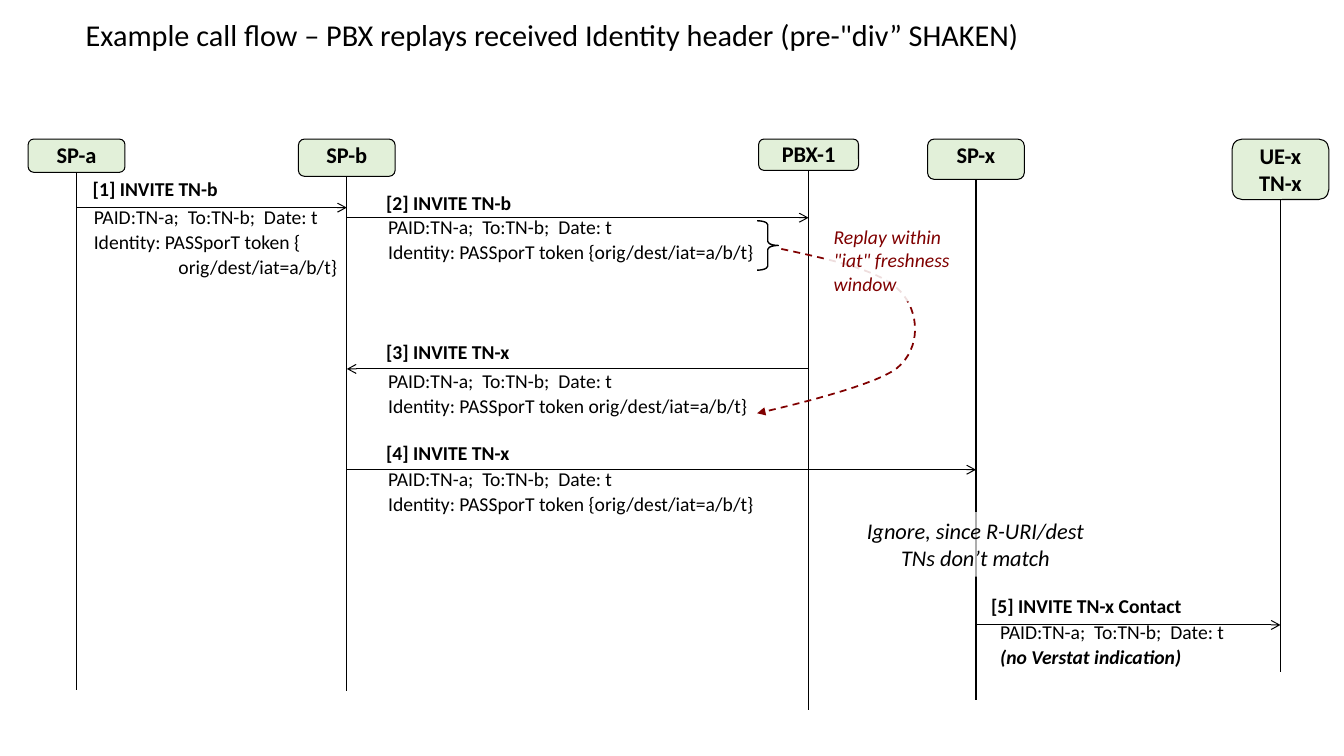
from lxml import etree
from pptx import Presentation, util as u
from pptx.dml.color import RGBColor
from pptx.enum import dml, shapes, text
from pptx.oxml import ns

BLACK = RGBColor(0, 0, 0)
WHITE = RGBColor(255, 255, 255)
GREEN = RGBColor(0xE2, 0xF0, 0xD9)
MAROON = RGBColor(0x80, 0, 0)
FONT = "Calibri"

HEAD_TOP = 1.38
# name lines, lifeline x, head width, head height, lifeline end
PARTICIPANTS = [
    (["SP-a"], 0.76, 0.96, 0.33, 6.85),
    (["SP-b"], 3.44, 0.96, 0.37, 6.86),
    (["PBX-1"], 8.02, 0.99, 0.31, 7.04),
    (["SP-x"], 9.68, 0.96, 0.4, 6.94),
    (["UE-x", "TN-x"], 12.7, 0.96, 0.6, 6.67),
]
SP_A, SP_B, PBX, SP_X, UE_X = [participant[1] for participant in PARTICIPANTS]

HEADERS = "PAID:TN-a;  To:TN-b;  Date: t"
TOKEN = "Identity: PASSporT token {orig/dest/iat=a/b/t}"
# label, start x, end x, arrow y, label (left, top), details (left, top, width), lines
MESSAGES = [
    ("[1] INVITE TN-b", SP_A, SP_B, 2.06, (0.79, 1.71), (0.8, 2.05, 2.89),
     [HEADERS, "Identity: PASSporT token {", "orig/dest/iat=a/b/t}"]),
    ("[2] INVITE TN-b", SP_B, PBX, 2.16, (3.7, 1.85), (3.72, 2.15, 4.09),
     [HEADERS, TOKEN]),
    ("[3] INVITE TN-x", PBX, SP_B, 3.66, (3.7, 3.33), (3.72, 3.68, 3.85),
     [HEADERS, "Identity: PASSporT token orig/dest/iat=a/b/t}"]),
    ("[4] INVITE TN-x", SP_B, SP_X, 4.66, (3.7, 4.33), (3.72, 4.65, 4.15),
     [HEADERS, TOKEN]),
    ("[5] INVITE TN-x Contact", SP_X, UE_X, 6.2, (9.7, 5.85), (9.79, 6.17, 3.03),
     [HEADERS, "(no Verstat indication)"]),
]
REPLAY_START = (7.75, 2.47)
REPLAY_CURVES = [
    ((8.31, 2.59), (8.74, 2.69), (8.93, 2.89)),
    ((9.12, 3.09), (9.14, 3.45), (8.9, 3.65)),
    ((8.66, 3.85), (7.51, 4.1), (7.51, 4.1)),
]


def inches(*lengths):
    return [u.Inches(length) for length in lengths]


def set_font(para, size, color=BLACK, bold=False, italic=False):
    font = para.font
    font.name, font.size = FONT, u.Pt(size)
    font.bold, font.italic = bold, italic
    font.color.rgb = color


def set_margins(frame, across, down):
    frame.margin_left = frame.margin_right = u.Inches(across)
    frame.margin_top = frame.margin_bottom = u.Inches(down)


def write_lines(frame, lines):
    frame.text = "\n".join(lines)
    return frame.paragraphs


def style_line(shape, color=BLACK, width=0.75, arrow=None):
    shape.line.color.rgb = color
    shape.line.width = u.Pt(width)
    if arrow:
        line = shape.line._get_or_add_ln()
        etree.SubElement(line, ns.qn("a:tailEnd"), type=arrow)


def add_line(page, x1, y1, x2, y2, arrow=None):
    line = page.shapes.add_connector(
        shapes.MSO_CONNECTOR.STRAIGHT, *inches(x1, y1, x2, y2))
    style_line(line, arrow=arrow)
    etree.SubElement(line._element.spPr, ns.qn("a:effectLst"))


def add_plain_shape(page, kind, box):
    shape = page.shapes.add_shape(kind, *inches(*box))
    shape.shadow.inherit = False
    shape.text_frame.word_wrap = True
    shape.text_frame.vertical_anchor = text.MSO_ANCHOR.TOP
    return shape


def add_title(page, wording, box):
    title = page.shapes.title
    title.left, title.top, title.width, title.height = inches(*box)
    frame = title.text_frame
    frame.text = wording
    frame.auto_size = text.MSO_AUTO_SIZE.NONE
    frame.vertical_anchor = text.MSO_ANCHOR.MIDDLE
    para = frame.paragraphs[0]
    para.alignment, para.line_spacing = text.PP_ALIGN.LEFT, 0.9
    set_font(para, 21.6)


def add_participant(page, names, x, width, height, end):
    box = (x - width / 2, HEAD_TOP, width, height)
    head = add_plain_shape(page, shapes.MSO_SHAPE.ROUNDED_RECTANGLE, box)
    head.fill.solid()
    head.fill.fore_color.rgb = GREEN
    style_line(head)
    set_margins(head.text_frame, 0, 0)
    for para in write_lines(head.text_frame, names):
        para.alignment = text.PP_ALIGN.CENTER
        set_font(para, 16, bold=True)
    add_line(page, x, HEAD_TOP + height, x, end)


def add_message_text(page, box, lines, margin, space, bold=False):
    frame = page.shapes.add_textbox(*inches(*box)).text_frame
    frame.word_wrap = True
    set_margins(frame, 0.13, margin)
    paras = write_lines(frame, lines)
    for para in paras:
        para.line_spacing, para.space_before = 0.9, u.Pt(space)
        set_font(para, 14, bold=bold)
    return paras


def add_message(page, label, start, end, y, label_at, details_at, lines):
    add_line(page, start, y, end, y, arrow="arrow")
    add_message_text(page, (*label_at, 2.47, 0.35), [label], 0.07, 8, bold=True)
    height = 0.25 * len(lines)
    paras = add_message_text(page, (*details_at, height), lines, 0.01, 2.7)
    for para in paras:
        if para.text.startswith("orig"):
            para._p.get_or_add_pPr().set("marL", str(u.Inches(0.84)))
        elif para.text.startswith("("):
            set_font(para, 14, bold=True, italic=True)


def curve_points(start, curves, steps=16):
    """Return points along a chain of cubic Bezier curves."""
    points = [start]
    for first, second, end in curves:
        origin = points[-1]
        for step in range(1, steps + 1):
            t = step / steps
            weights = ((1 - t) ** 3, 3 * t * (1 - t) ** 2, 3 * t * t * (1 - t), t ** 3)
            corners = (origin, first, second, end)
            points.append(tuple(
                sum(w * corner[axis] for w, corner in zip(weights, corners))
                for axis in (0, 1)))
    return points


def add_replay(page, brace_box):
    brace = add_plain_shape(page, shapes.MSO_SHAPE.RIGHT_BRACE, brace_box)
    brace.adjustments[0] = 0.187
    brace.fill.background()
    style_line(brace, width=1)

    start, *points = [inches(*point)
                      for point in curve_points(REPLAY_START, REPLAY_CURVES)]
    builder = page.shapes.build_freeform(*start)
    builder.add_line_segments(points, close=False)
    path = builder.convert_to_shape()
    path.shadow.inherit = False
    path.fill.background()
    path.line.dash_style = dml.MSO_LINE.DASH
    style_line(path, MAROON, 1.25, "triangle")


def add_note(page, box, wording, size, color, opacity, alignment):
    note = add_plain_shape(page, shapes.MSO_SHAPE.RECTANGLE, box)
    note.fill.solid()
    note.fill.fore_color.rgb = WHITE
    tint = note.fill._xPr.find(".//" + ns.qn("a:srgbClr"))
    etree.SubElement(tint, ns.qn("a:alpha"), val=str(opacity * 1000))
    note.line.fill.background()
    para = write_lines(note.text_frame, [wording])[0]
    para.alignment = alignment
    set_font(para, size, color, italic=True)


def main():
    deck = Presentation()
    deck.slide_width, deck.slide_height = inches(13.33, 7.5)
    page = deck.slides.add_slide(deck.slide_layouts[5])
    add_title(page, "Example call flow – PBX replays received Identity header "
              "(pre-\"div” SHAKEN)", (0.75, 0, 11.5, 0.73))
    for participant in PARTICIPANTS:
        add_participant(page, *participant)
    for message in MESSAGES:
        add_message(page, *message)
    add_replay(page, (7.51, 2.19, 0.21, 0.49))
    add_note(page, (8.17, 2.18, 1.42, 0.81), "Replay within \"iat\" freshness window",
             14, MAROON, 87, text.PP_ALIGN.LEFT)
    add_note(page, (8.41, 5.08, 2.53, 0.64), "Ignore, since R-URI/dest TNs don’t match",
             16, BLACK, 68, text.PP_ALIGN.CENTER)
    deck.save("out.pptx")


if __name__ == "__main__":
    main()
